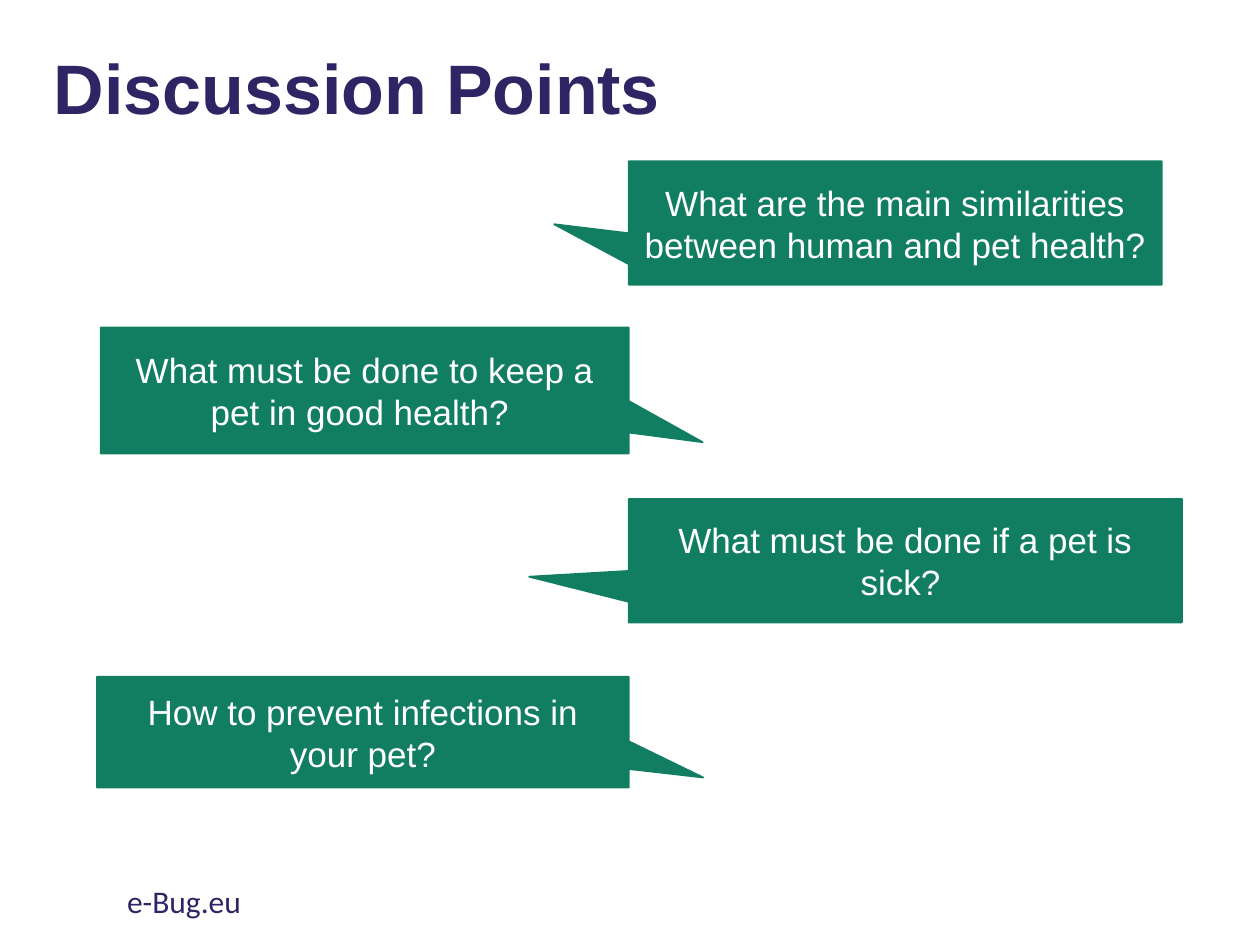
"""Build the discussion points slide with four question callouts."""
from dataclasses import dataclass

from pptx import Presentation
from pptx.dml.color import RGBColor
from pptx.enum.shapes import MSO_SHAPE
from pptx.enum.text import MSO_ANCHOR, PP_ALIGN
from pptx.slide import Slide
from pptx.text.text import TextFrame
from pptx.util import Inches, Pt

CALLOUT = MSO_SHAPE.RECTANGULAR_CALLOUT
MIDDLE, TOP = MSO_ANCHOR.MIDDLE, MSO_ANCHOR.TOP
CENTER, LEFT = PP_ALIGN.CENTER, PP_ALIGN.LEFT

COLORS = {"navy": "302564", "green": "117E62", "white": "FFFFFF"}
SLIDE_WIDTH, SLIDE_HEIGHT = Inches(10), Inches(7.5)
COLUMNS, ROWS = 100, 75
MIDLINE = 49.9


@dataclass(frozen=True)
class Area:
    """Place on the slide in grid columns and rows."""
    column: float
    row: float
    columns: float
    rows: float

    def lengths(self) -> tuple[int, int, int, int]:
        """Return left, top, width and height as slide lengths."""
        across, down = SLIDE_WIDTH / COLUMNS, SLIDE_HEIGHT / ROWS
        return (round(self.column * across), round(self.row * down),
                round(self.columns * across), round(self.rows * down))


@dataclass(frozen=True)
class TextStyle:
    """Look of the text in one box."""
    size: int
    color: str
    font: str = "Arial"
    bold: bool = False
    align: PP_ALIGN = LEFT
    anchor: MSO_ANCHOR = TOP
    line_spacing: float = 1.0


@dataclass(frozen=True)
class Question:
    """Callout with its pointer tip as shares of its own size."""
    text: str
    area: Area
    tip: tuple[float, float]


TITLE_STYLE = TextStyle(40, "navy", bold=True, anchor=MIDDLE, line_spacing=0.9)
QUESTION_STYLE = TextStyle(20, "white", align=CENTER, anchor=MIDDLE)
FOOTER_STYLE = TextStyle(18, "navy", font="Calibri")
RIGHTWARD_TIP = (0.64, 0.41)

QUESTIONS = [
    Question("What are the main similarities between human and pet health?",
             Area(MIDLINE, 12.8, 42.3, 9.8), (-0.64, 0.01)),
    Question("What must be done to keep a pet in good health? ",
             Area(8, 26, MIDLINE - 8, 10), RIGHTWARD_TIP),
    Question("What must be done if a pet is sick? ",
             Area(MIDLINE, 39.6, 43.9, 9.8), (-0.68, 0.13)),
    Question("How to prevent infections in your pet?",
             Area(7.7, 53.7, MIDLINE - 7.7, 8.8), RIGHTWARD_TIP),
]


def color(name: str) -> RGBColor:
    """Look up a named colour."""
    return RGBColor.from_string(COLORS[name])


def write(frame: TextFrame, text: str, style: TextStyle) -> None:
    """Fill a text frame with one styled paragraph."""
    frame.word_wrap = True
    frame.vertical_anchor = style.anchor
    para = frame.paragraphs[0]
    para.text = text
    para.alignment = style.align
    para.line_spacing = style.line_spacing
    para.font.name = style.font
    para.font.size = Pt(style.size)
    para.font.bold = style.bold
    para.font.color.rgb = color(style.color)


def add_text(page: Slide, text: str, area: Area, style: TextStyle) -> None:
    """Add a plain text box."""
    box = page.shapes.add_textbox(*area.lengths())
    write(box.text_frame, text, style)


def add_question(page: Slide, question: Question) -> None:
    """Add a green callout holding one question."""
    box = page.shapes.add_shape(CALLOUT, *question.area.lengths())
    box.shadow.inherit = False
    box.adjustments[0], box.adjustments[1] = question.tip
    box.fill.solid()
    box.fill.fore_color.rgb = color("green")
    box.line.color.rgb = color("green")
    box.line.width = Pt(1)
    write(box.text_frame, question.text, QUESTION_STYLE)


def main() -> None:
    """Create and save the deck."""
    deck = Presentation()
    deck.slide_width, deck.slide_height = SLIDE_WIDTH, SLIDE_HEIGHT
    page = deck.slides.add_slide(deck.slide_layouts[6])
    add_text(page, "Discussion Points", Area(3.3, 0, 73.2, 14.5), TITLE_STYLE)
    for question in QUESTIONS:
        add_question(page, question)
    add_text(page, "e-Bug.eu", Area(9.1, 69.5, 33.8, 4), FOOTER_STYLE)
    deck.save("out.pptx")


if __name__ == "__main__":
    main()
